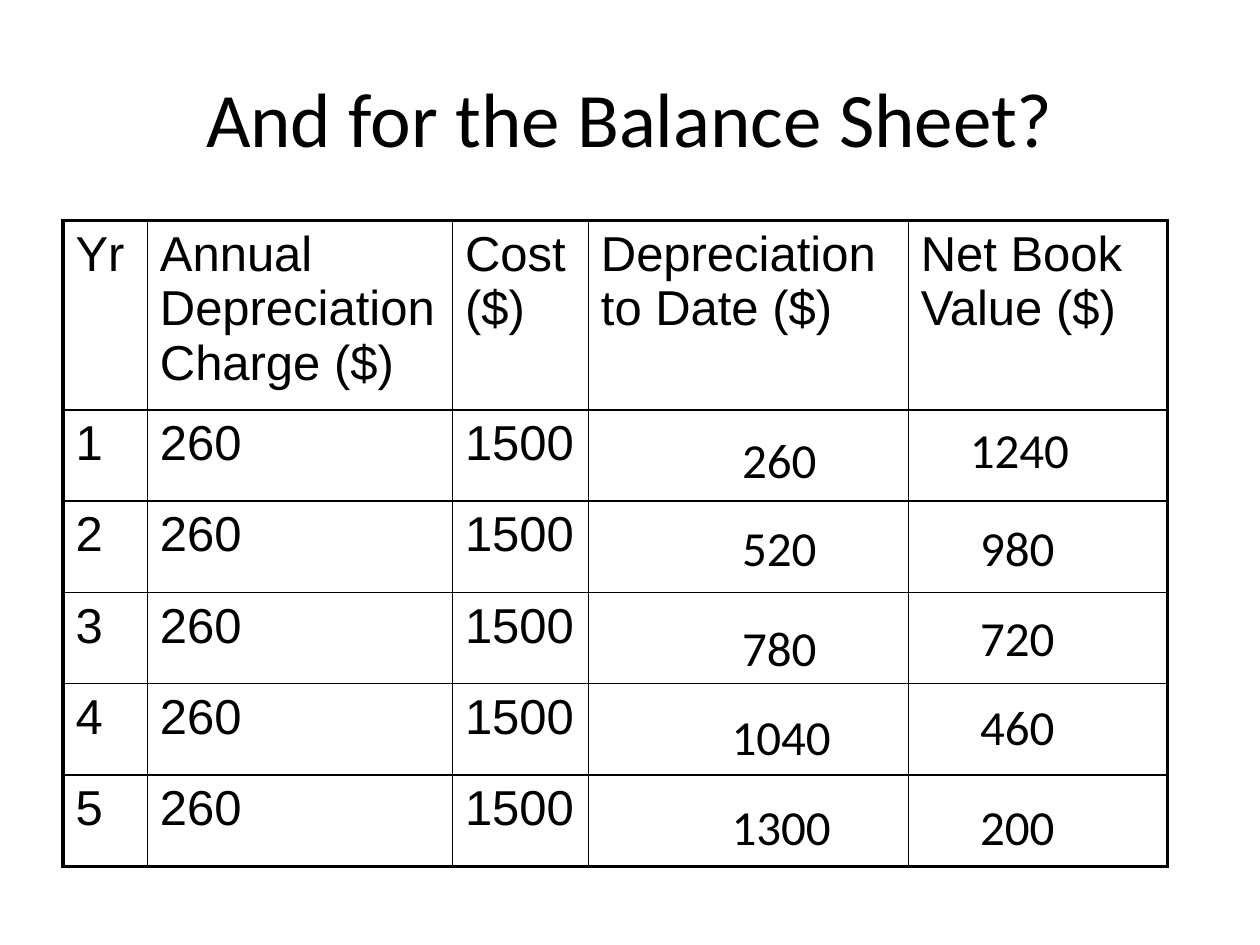
from lxml.etree import SubElement
from pptx import Presentation
from pptx.dml.color import RGBColor
from pptx.enum.text import MSO_ANCHOR as Anchor, PP_ALIGN as Align
from pptx.oxml.ns import qn
from pptx.util import Cm, Pt

BLACK = RGBColor(0, 0, 0)
TITLE_FONT = {"name": "Calibri", "size": Pt(44)}
ANSWER_FONT = {"name": "Calibri", "size": Pt(28)}
TABLE_FONT = {"name": "Arial", "size": Pt(28)}


def write(frame, text, font_format):
    run = frame.paragraphs[0].add_run()
    run.text = text
    run.font.color.rgb = BLACK
    for attribute, value in font_format.items():
        setattr(run.font, attribute, value)


def add_border(cell, side, points):
    """Draw one cell edge; side is lnL, lnR, lnT or lnB, called in that order."""
    line = SubElement(cell._tc.get_or_add_tcPr(), qn(f"a:{side}"), w=str(Pt(points)))
    fill = SubElement(line, qn("a:solidFill"))
    SubElement(fill, qn("a:srgbClr"), val=str(BLACK))


prs = Presentation()
prs.slide_width, prs.slide_height = Cm(25.4), Cm(19.05)
slide = prs.slides.add_slide(prs.slide_layouts[6])

# Title
title = slide.shapes.add_textbox(Cm(1.27), Cm(0.76), Cm(22.86), Cm(3.18)).text_frame
title.word_wrap = True
title.vertical_anchor = Anchor.MIDDLE
title.paragraphs[0].alignment = Align.CENTER
write(title, "And for the Balance Sheet?", TITLE_FONT)

# Depreciation table
headings = ["Yr", "Annual Depreciation Charge ($)", "Cost ($)",
            "Depreciation to Date ($)", "Net Book Value ($)"]
schedule = [headings] + [[str(year), "260", "1500", "", ""] for year in range(1, 6)]
column_widths = [1.7, 6.15, 2.74, 6.45, 5.23]
row_heights = [3.35] + [1.84] * 5
last_row, last_column = len(row_heights) - 1, len(column_widths) - 1

table = slide.shapes.add_table(
    len(row_heights), len(column_widths), Cm(1.27), Cm(4.45),
    Cm(sum(column_widths)), Cm(sum(row_heights))).table
table.first_row = table.horz_banding = False
for column, width in zip(table.columns, column_widths):
    column.width = Cm(width)
for row, height in zip(table.rows, row_heights):
    row.height = Cm(height)

for r, entries in enumerate(schedule):
    for c, entry in enumerate(entries):
        cell = table.cell(r, c)
        if entry:
            write(cell.text_frame, entry, TABLE_FONT)
        outer_edges = {"lnL": c == 0, "lnR": c == last_column,
                       "lnT": r == 0, "lnB": r == last_row}
        for side, is_outer in outer_edges.items():
            add_border(cell, side, 2.25 if is_outer else 1)
        cell.fill.background()

# Answers laid over the two empty columns: text, left, top, width
answers = [
    ("260", 14.71, 8.53, 2.59),
    ("520", 14.71, 10.31, 2.59),
    ("780", 14.71, 12.32, 2.59),
    ("1040", 14.5, 14.12, 2.79),
    ("1300", 14.5, 15.93, 2.79),
    ("1240", 19.3, 8.33, 3.2),
    ("980", 19.51, 10.31, 2.59),
    ("720", 19.51, 12.12, 2.59),
    ("460", 19.51, 13.92, 2.59),
    ("200", 19.51, 15.93, 2.59),
]
for amount, left, top, width in answers:
    answer = slide.shapes.add_textbox(Cm(left), Cm(top), Cm(width), Cm(1.45)).text_frame
    answer.word_wrap = True
    write(answer, amount, ANSWER_FONT)

prs.save("out.pptx")
